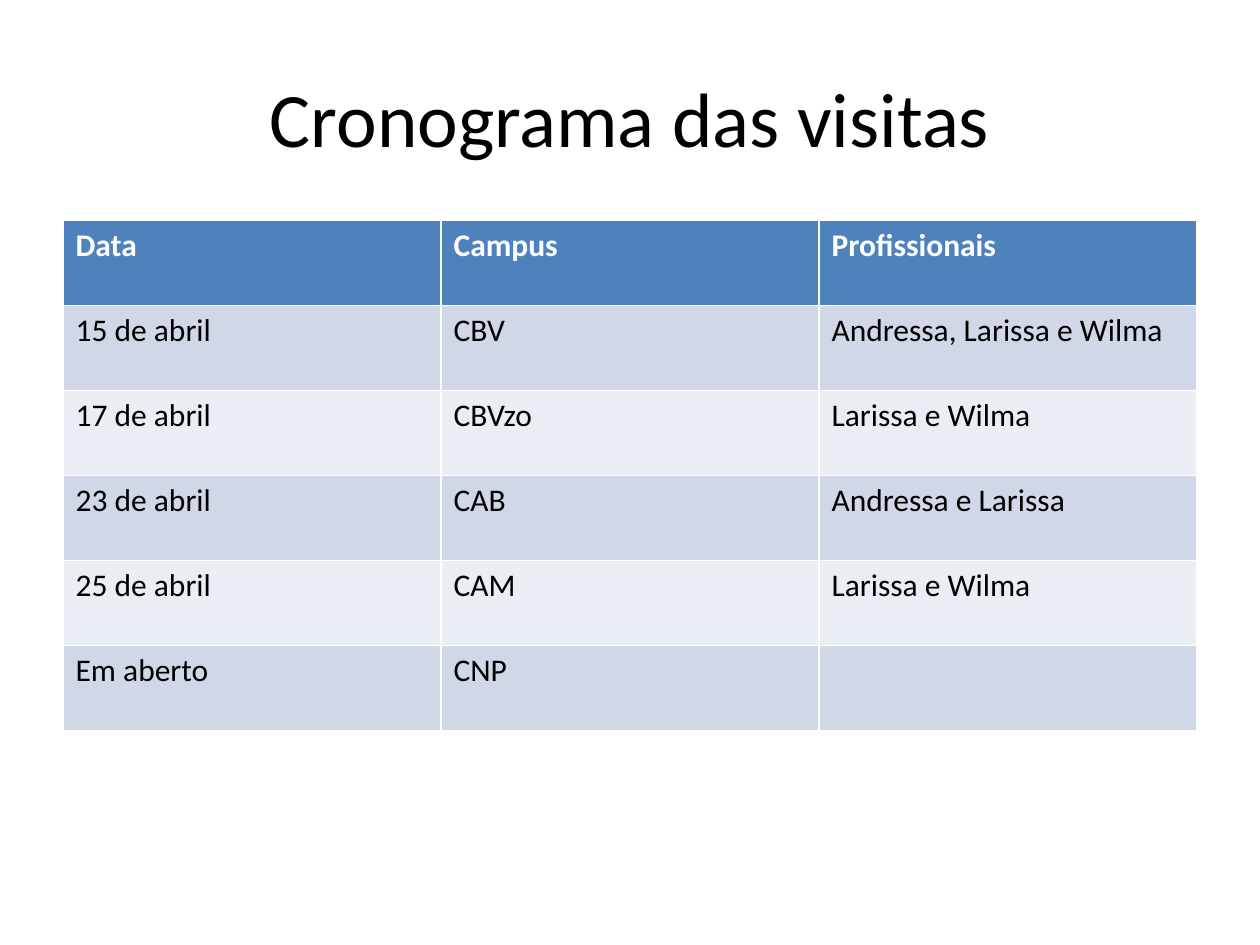
from pptx import Presentation
from pptx.dml.color import RGBColor
from pptx.enum.text import MSO_ANCHOR, PP_ALIGN
from pptx.util import Pt

CENTER = PP_ALIGN.CENTER
MIDDLE = MSO_ANCHOR.MIDDLE

COLORS = {
    "text": "000000",
    "header_text": "FFFFFF",
    "header": "4F81BD",
    "odd": "D0D8E8",
    "even": "E9EDF4",
}
TITLE = {"name": "Calibri", "size": Pt(44), "bold": False}
HEADER = {"name": "Calibri", "size": Pt(18), "bold": True}
BODY = {"name": "Calibri", "size": Pt(18), "bold": False}

VISITS = [
    ("Data", "Campus", "Profissionais"),
    ("15 de abril", "CBV", "Andressa, Larissa e Wilma"),
    ("17 de abril", "CBVzo", "Larissa e Wilma"),
    ("23 de abril", "CAB", "Andressa e Larissa"),
    ("25 de abril", "CAM", "Larissa e Wilma"),
    ("Em aberto", "CNP", ""),
]
COL_W, ROW_H = 216, 48.6


def write(tf, text, fmt, color):
    p = tf.paragraphs[0]
    p.text = text
    for font in [p.font] + [r.font for r in p.runs]:
        for key, value in fmt.items():
            setattr(font, key, value)
        font.color.rgb = RGBColor.from_string(COLORS[color])
    return p


prs = Presentation()
prs.slide_width, prs.slide_height = Pt(720), Pt(540)
s = prs.slides.add_slide(prs.slide_layouts[5])

title = s.shapes.title
box = {"left": 36, "top": 21.6, "width": 648, "height": 90}
for key, value in box.items():
    setattr(title, key, Pt(value))
title.text_frame.vertical_anchor = MIDDLE
write(title.text_frame, "Cronograma das visitas", TITLE, "text").alignment = CENTER

n_rows, n_cols = len(VISITS), len(VISITS[0])
table = s.shapes.add_table(n_rows, n_cols, Pt(36), Pt(126),
                           Pt(COL_W * n_cols), Pt(ROW_H * n_rows)).table
for col in table.columns:
    col.width = Pt(COL_W)
for i, visit in enumerate(VISITS):
    table.rows[i].height = Pt(ROW_H)
    if i == 0:
        fill, fmt, color = "header", HEADER, "header_text"
    else:
        fill, fmt, color = "odd" if i % 2 else "even", BODY, "text"
    for j, text in enumerate(visit):
        cell = table.cell(i, j)
        cell.fill.solid()
        cell.fill.fore_color.rgb = RGBColor.from_string(COLORS[fill])
        if text:
            write(cell.text_frame, text, fmt, color)

prs.save("out.pptx")
